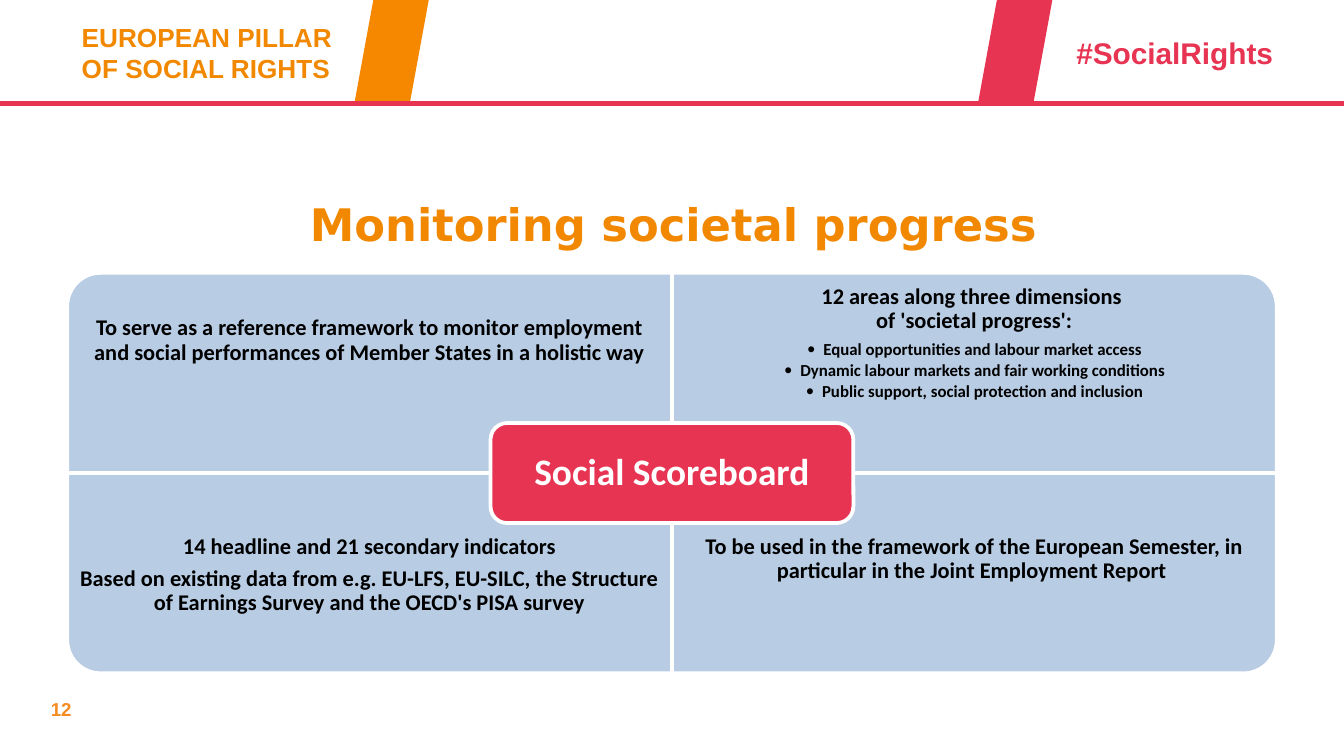
"""Build the Social Scoreboard slide: four quadrants around a central label."""
from lxml import etree
from pptx import Presentation
from pptx.dml.color import RGBColor
from pptx.enum.shapes import MSO_CONNECTOR, MSO_SHAPE
from pptx.enum.text import MSO_ANCHOR, PP_ALIGN
from pptx.oxml.ns import qn
from pptx.util import Emu, Inches, Pt

LEFT, CENTER = PP_ALIGN.LEFT, PP_ALIGN.CENTER
TOP, MIDDLE = MSO_ANCHOR.TOP, MSO_ANCHOR.MIDDLE
ONE_ROUND, ROUNDED = MSO_SHAPE.ROUND_1_RECTANGLE, MSO_SHAPE.ROUNDED_RECTANGLE
SLANT, STRAIGHT = MSO_SHAPE.PARALLELOGRAM, MSO_CONNECTOR.STRAIGHT

COLORS = {"orange": "F18800", "bar": "F68800", "number": "F68B20",
          "red": "E73452", "blue": "B8CCE4", "white": "FFFFFF", "black": "000000"}
WIDTH = 10
HEIGHT = WIDTH * 9 / 16
GRID_LEFT, GRID_TOP, CELL_WIDTH, CELL_HEIGHT = 0.5, 2.03, 4.5, 1.49
TEXT_HEIGHT = CELL_HEIGHT * 0.75
HUB_WIDTH, HUB_HEIGHT = CELL_WIDTH * 0.6, CELL_HEIGHT / 2
RULE_TOP, BAR_WIDTH, BAR_HEIGHT = 0.77, 0.55, 0.75
BULLET_INDENT = 0.12

LABELS = [
    (["12"], (0.28, 5.14, 2.18, 0.27), "Arial", 10, "number", LEFT, TOP),
    (["EUROPEAN PILLAR ", "OF SOCIAL RIGHTS"], (0.51, 0.11, 2.54, 0.57),
     "Arial", 14, "orange", LEFT, TOP),
    (["#SocialRights"], (7.91, 0.21, 1.73, 0.37), "Arial", 16, "red", LEFT, TOP),
    (["Monitoring societal progress"], (0.51, 1.28, 9, 0.77),
     "DejaVu Sans", 24, "orange", CENTER, MIDDLE),
]
BARS = [(2.64, "bar"), (7.28, "red")]
QUADRANTS = [
    {"cell": (0, 0), "turn": 270, "drop": 0.29, "points": [
        ["To serve as a reference framework to monitor employment and social "
         "performances of Member States in a holistic way"]]},
    {"cell": (1, 0), "turn": 0, "points": [
        ["12 areas along three dimensions ", "of 'societal progress':"]],
     "bullets": ["Equal opportunities and labour market access",
                 "Dynamic labour markets and fair working conditions",
                 "Public support, social protection and inclusion"]},
    {"cell": (0, 1), "turn": 180, "points": [
        ["14 headline and 21 secondary indicators"],
        ["Based on existing data from e.g. EU-LFS, EU-SILC, the Structure of "
         "Earnings Survey and the OECD's PISA survey"]]},
    {"cell": (1, 1), "turn": 90, "points": [
        ["To be used in the framework of the European Semester, in particular "
         "in the Joint Employment Report "]]},
]
HUB = "Social Scoreboard"


def rgb(name):
    return RGBColor.from_string(COLORS[name])


def add_block(slide, kind, place, fill, line=None, turn=0):
    shape = slide.shapes.add_shape(kind, *map(Inches, place))
    shape.shadow.inherit = False
    shape.rotation = turn
    shape.fill.solid()
    shape.fill.fore_color.rgb = rgb(fill)
    if line:
        shape.line.color.rgb = rgb(line)
        shape.line.width = Pt(2)
    else:
        shape.line.fill.background()
    return shape


def set_frame(frame, anchor, inset=None, drop=0):
    frame.word_wrap = True
    frame.vertical_anchor = anchor
    if inset is not None:
        frame.margin_left = frame.margin_right = frame.margin_bottom = Inches(inset)
        frame.margin_top = Inches(inset + drop)


def add_para(frame, lines, font, size, color, align, spacing=None, after=0, bullet=False):
    first = frame.paragraphs[0]
    para = frame.add_paragraph() if first.runs else first
    para.alignment = align
    if spacing:
        para.line_spacing = spacing
        para.space_after = Pt(after)
    if bullet:
        para.level = 1
        props = para._p.get_or_add_pPr()
        props.set("marL", str(Inches(BULLET_INDENT)))
        props.set("indent", str(-Inches(BULLET_INDENT)))
        etree.SubElement(props, qn("a:buFont"), typeface=font)
        etree.SubElement(props, qn("a:buChar"), char="•")
    for index, line in enumerate(lines):
        if index:
            para.add_line_break()
        span = para.add_run()
        span.text = line
        span.font.name, span.font.size, span.font.bold = font, Pt(size), True
        span.font.color.rgb = rgb(color)


def add_header(slide):
    rule = slide.shapes.add_connector(STRAIGHT, Emu(0), Inches(RULE_TOP),
                                      Inches(WIDTH), Inches(RULE_TOP))
    rule.line.color.rgb = rgb("red")
    rule.line.width = Pt(2.25)
    etree.SubElement(rule._element.spPr, qn("a:effectLst"))
    for left, color in BARS:
        add_block(slide, SLANT, (left, 0, BAR_WIDTH, BAR_HEIGHT), color)
    for lines, place, font, size, color, align, anchor in LABELS:
        box = slide.shapes.add_textbox(*map(Inches, place))
        set_frame(box.text_frame, anchor)
        add_para(box.text_frame, lines, font, size, color, align)


def add_quadrant(slide, cell, turn, points, bullets=(), drop=0):
    column, row = cell
    left = GRID_LEFT + column * CELL_WIDTH
    top = GRID_TOP + row * CELL_HEIGHT
    width, height = (CELL_HEIGHT, CELL_WIDTH) if turn % 180 else (CELL_WIDTH, CELL_HEIGHT)
    place = (left + (CELL_WIDTH - width) / 2, top + (CELL_HEIGHT - height) / 2, width, height)
    add_block(slide, ONE_ROUND, place, "blue", "white", turn)
    text_top = top + row * (CELL_HEIGHT - TEXT_HEIGHT)
    box = slide.shapes.add_textbox(*map(Inches, (left, text_top, CELL_WIDTH, TEXT_HEIGHT)))
    set_frame(box.text_frame, TOP, 0.09, drop)
    for lines in points:
        add_para(box.text_frame, lines, "Calibri", 12, "black", CENTER, 0.9, 4.2)
    for bullet in bullets:
        add_para(box.text_frame, [bullet], "Calibri", 9, "black", CENTER, 0.9, 1.35, True)


def main():
    deck = Presentation()
    deck.slide_width, deck.slide_height = Inches(WIDTH), Inches(HEIGHT)
    slide = deck.slides.add_slide(deck.slide_layouts[6])
    add_header(slide)
    for quadrant in QUADRANTS:
        add_quadrant(slide, **quadrant)
    hub = add_block(slide, ROUNDED, (GRID_LEFT + CELL_WIDTH - HUB_WIDTH / 2,
                                     GRID_TOP + CELL_HEIGHT - HUB_HEIGHT / 2,
                                     HUB_WIDTH, HUB_HEIGHT), "red", "white")
    set_frame(hub.text_frame, MIDDLE, 0.08)
    add_para(hub.text_frame, [HUB], "Calibri", 20, "white", CENTER, 0.9)
    deck.save("out.pptx")


if __name__ == "__main__":
    main()
